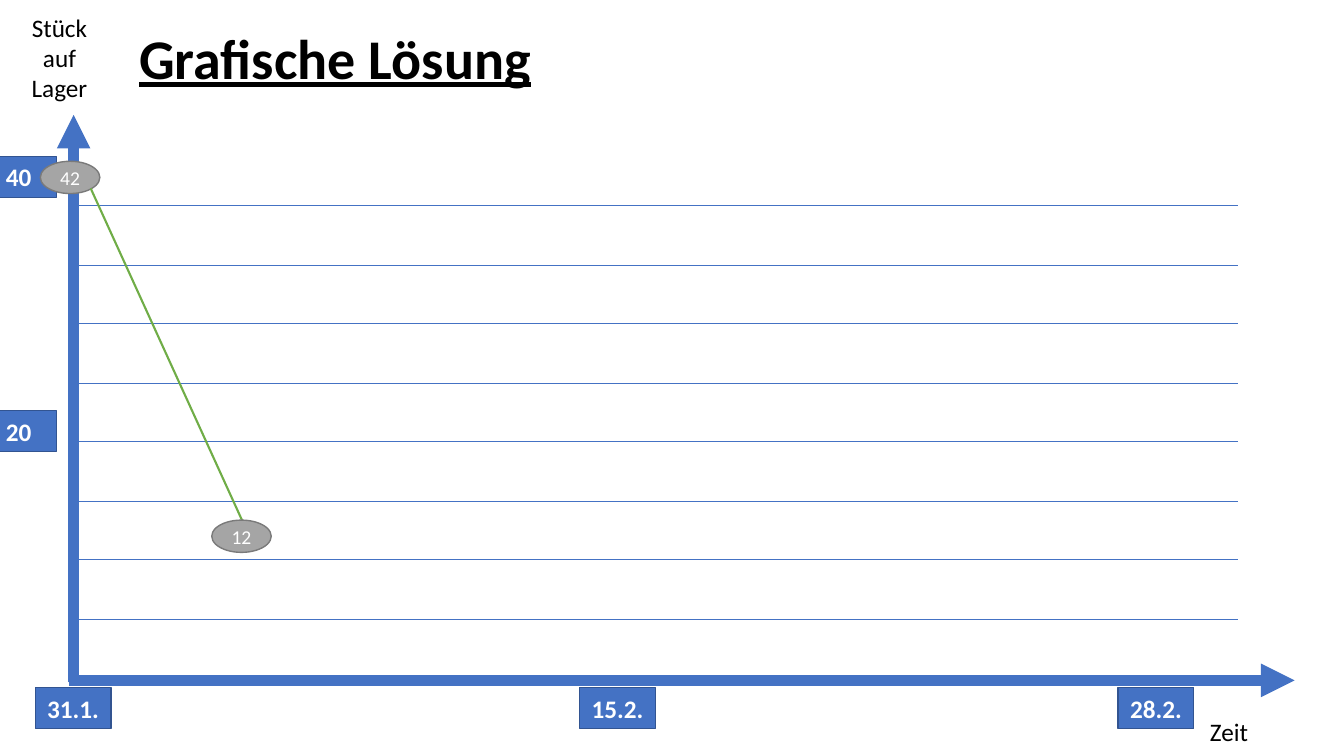
from lxml import etree
from pptx import Presentation
from pptx import util as u
from pptx.dml.color import RGBColor
from pptx.enum import shapes, text
from pptx.oxml.ns import qn

COLORS = {
    "axis": "4472C4",
    "axis_border": "325491",
    "stock": "A5A5A5",
    "stock_border": "7A7A7A",
    "trend": "70AD47",
    "dark": "000000",
    "light": "FFFFFF",
}
EMU_PER_PX = 9144  # 100 px to the inch
TITLE_ONLY_LAYOUT = 5


def px(length):
    return u.Emu(length * EMU_PER_PX)


def color(name):
    return RGBColor.from_string(COLORS[name])


class DiagramSlide:
    font_name = "Calibri"

    def __init__(self, presentation):
        self.slide = presentation.slides.add_slide(
            presentation.slide_layouts[TITLE_ONLY_LAYOUT])

    def set_text(self, shape, content, size, ink, bold=False, underline=False,
                 align=text.PP_ALIGN.CENTER, anchor=text.MSO_ANCHOR.TOP, wrap=True):
        frame = shape.text_frame
        frame.text = content
        frame.word_wrap = wrap
        frame.auto_size = text.MSO_AUTO_SIZE.NONE
        frame.vertical_anchor = anchor
        paragraph = frame.paragraphs[0]
        paragraph.alignment = align
        font = paragraph.runs[0].font
        font.name = self.font_name
        font.size = u.Pt(size)
        font.bold = bold
        font.underline = underline
        font.color.rgb = color(ink)

    def title(self, content, left, top, width, height):
        shape = self.slide.shapes.title
        shape.left, shape.top = px(left), px(top)
        shape.width, shape.height = px(width), px(height)
        self.set_text(shape, content, 40, "dark", bold=True, underline=True,
                      align=text.PP_ALIGN.LEFT)

    def label(self, content, left, top, width, height):
        box = self.slide.shapes.add_textbox(px(left), px(top), px(width), px(height))
        self.set_text(box, content, 18, "dark")

    def filled(self, kind, content, left, top, width, height, fill, size, bold):
        """Add a bordered shape with centred light text."""
        shape = self.slide.shapes.add_shape(
            kind, px(left), px(top), px(width), px(height))
        shape.shadow.inherit = False
        shape.fill.solid()
        shape.fill.fore_color.rgb = color(fill)
        shape.line.color.rgb = color(fill + "_border")
        shape.line.width = u.Pt(1)
        self.set_text(shape, content, size, "light", bold=bold,
                      anchor=text.MSO_ANCHOR.MIDDLE, wrap=False)

    def tick(self, content, left, top):
        self.filled(shapes.MSO_SHAPE.RECTANGLE, content, left, top, 75, 41,
                    "axis", 18, True)

    def stock(self, content, left, top):
        self.filled(shapes.MSO_SHAPE.OVAL, content, left, top, 59, 32,
                    "stock", 14, False)

    def line(self, start, end, ink, width, arrow=False):
        connector = self.slide.shapes.add_connector(
            shapes.MSO_CONNECTOR.STRAIGHT, *map(px, start + end))
        connector.line.color.rgb = color(ink)
        connector.line.width = u.Pt(width)
        properties = connector._element.spPr
        if arrow:
            outline = properties.find(qn("a:ln"))
            etree.SubElement(outline, qn("a:tailEnd"), type="triangle")
        etree.SubElement(properties, qn("a:effectLst"))


def main():
    presentation = Presentation()
    presentation.slide_width = px(1333)
    presentation.slide_height = px(750)
    diagram = DiagramSlide(presentation)

    diagram.title("Grafische Lösung", 128, 18, 677, 77)

    diagram.line((68, 675), (1284, 675), "axis", 8, arrow=True)
    diagram.line((73, 677), (73, 114), "axis", 8, arrow=True)
    for date, left in (("31.1.", 35), ("15.2.", 575), ("28.2.", 1109)):
        diagram.tick(date, left, 682)
    for quantity, top in (("20", 407), ("40", 155)):
        diagram.tick(quantity, -19, top)
    diagram.label("Stück auf Lager", 9, 7, 100, 101)
    diagram.label("Zeit", 1129, 706, 180, 40)

    first_grid, last_grid, grid_count = 204, 614, 8
    for index in range(grid_count):
        y = first_grid + round(index * (last_grid - first_grid) / (grid_count - 1))
        diagram.line((75, y), (1228, y), "axis", 0.5)

    diagram.stock("42", 40, 160)
    diagram.line((90, 187), (240, 516), "trend", 1.5)
    diagram.stock("12", 210, 516)

    presentation.save("out.pptx")


if __name__ == "__main__":
    main()
